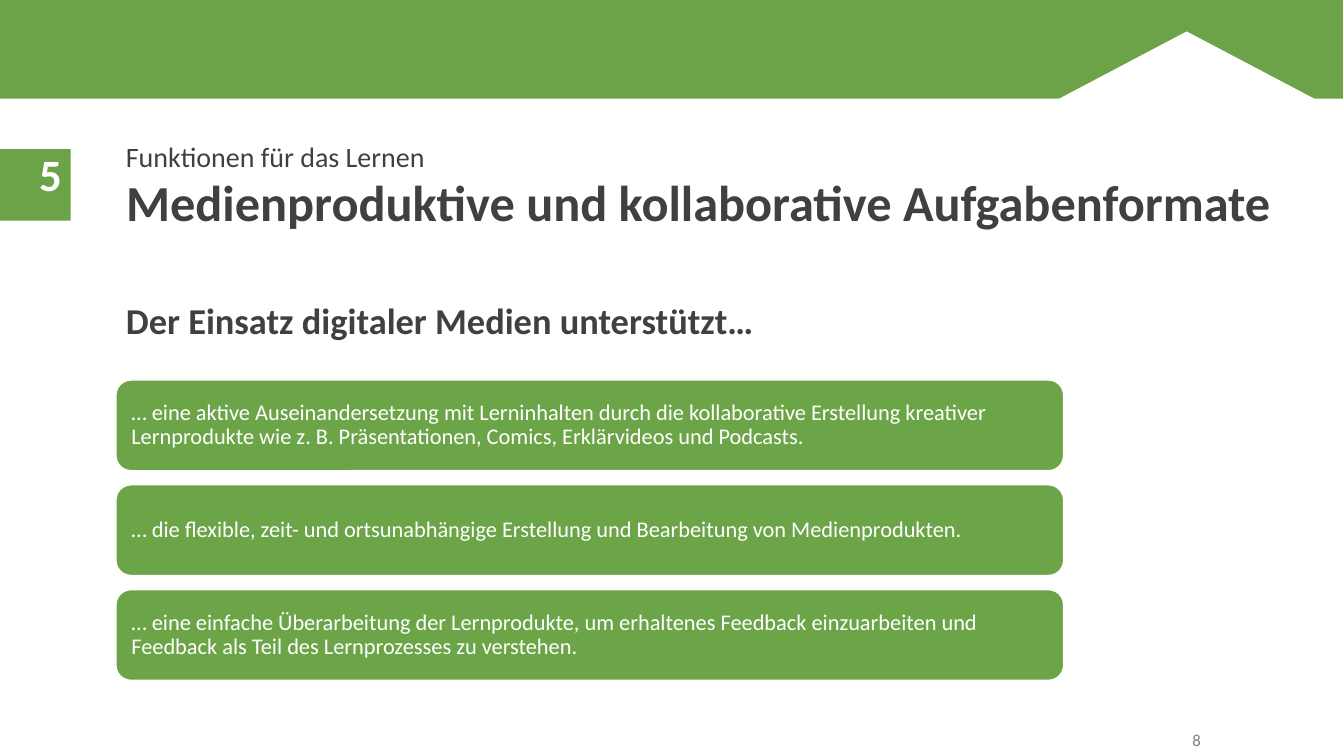
import dataclasses

import pptx
import pptx.dml.color
import pptx.enum.shapes
import pptx.enum.text
import pptx.util

SHAPE = pptx.enum.shapes.MSO_SHAPE
ANCHOR = pptx.enum.text.MSO_ANCHOR
ALIGN = pptx.enum.text.PP_ALIGN
PX = 9144


@dataclasses.dataclass(frozen=True)
class Theme:
    """Colours, font and type sizes of the slide."""
    font: str = "Calibri"
    green: str = "6CA348"
    card: str = "6CA448"
    white: str = "FFFFFF"
    ink: str = "404040"
    grey: str = "808080"
    title: int = 36
    badge: int = 32
    lead: int = 26
    kicker: int = 20
    body: int = 16
    small: int = 12


THEME = Theme()
CARDS = [
    "… eine aktive Auseinandersetzung mit Lerninhalten durch die kollaborative Erstellung kreativer "
    "Lernprodukte wie z. B. Präsentationen, Comics, Erklärvideos und Podcasts.",
    "… die flexible, zeit- und ortsunabhängige Erstellung und Bearbeitung von Medienprodukten.",
    "… eine einfache Überarbeitung der Lernprodukte, um erhaltenes Feedback einzuarbeiten und "
    "Feedback als Teil des Lernprozesses zu verstehen.",
]


def color(code):
    """Turn a hex code into a colour."""
    return pptx.dml.color.RGBColor.from_string(code)


def scale(box):
    """Turn a px box into EMU lengths."""
    return [n * PX for n in box]


def write(shape, text, size, ink, bold=False, align=ALIGN.LEFT,
          anchor=ANCHOR.TOP, space=1.0, pad=(10, 5)):
    """Fill a shape with one styled run."""
    frame = shape.text_frame
    frame.word_wrap = True
    frame.auto_size = pptx.enum.text.MSO_AUTO_SIZE.NONE
    frame.vertical_anchor = anchor
    frame.margin_left = frame.margin_right = pad[0] * PX
    frame.margin_top = frame.margin_bottom = pad[1] * PX
    para = frame.paragraphs[0]
    para.alignment = align
    para.line_spacing = space
    run = para.add_run()
    run.text = text
    font = run.font
    font.name = THEME.font
    font.size = pptx.util.Pt(size)
    font.bold = bold
    font.color.rgb = color(ink)


def label(slide, box, *args, **style):
    """Add a text box with one run."""
    write(slide.shapes.add_textbox(*scale(box)), *args, **style)


def block(slide, kind, box, fill, line=None):
    """Add a flat filled shape."""
    shape = slide.shapes.add_shape(kind, *scale(box))
    shape.shadow.inherit = False
    shape.fill.solid()
    shape.fill.fore_color.rgb = color(fill)
    if line:
        shape.line.color.rgb = color(line)
        shape.line.width = pptx.util.Pt(1)
    else:
        shape.line.fill.background()
    return shape


def banner(slide, box):
    """Draw the top band with its white roof."""
    left, top, wide, high = box
    block(slide, SHAPE.RECTANGLE, box, THEME.green)
    roof = (left + wide - 377, top + 32, 444, 117)
    block(slide, SHAPE.ISOSCELES_TRIANGLE, roof, THEME.white, THEME.white)


def badge(slide, box, text):
    """Draw the chapter number on its square."""
    left, top, wide, high = box
    block(slide, SHAPE.RECTANGLE, box, THEME.green)
    label(slide, (left + 30, top - 7, 36, 64), text, THEME.badge, THEME.white, bold=True)


def header(slide, box, kicker, title):
    """Place the kicker above the title."""
    left, top, wide, high = box
    label(slide, (left, top, 994, 55), kicker, THEME.kicker, THEME.ink,
          anchor=ANCHOR.BOTTOM, space=0.9)
    head = slide.shapes.title
    head.left, head.top, head.width, head.height = scale((left, top + high - 63, wide, 63))
    write(head, title, THEME.title, THEME.ink, bold=True, anchor=ANCHOR.BOTTOM, space=0.9)


def stack(slide, box, texts, gap=14):
    """Stack equal cards down the box."""
    left, top, wide, high = box
    tall = (high - gap * (len(texts) - 1)) // len(texts)
    for row, text in enumerate(texts):
        place = (left, top + row * (tall + gap), wide, tall)
        card = block(slide, SHAPE.ROUNDED_RECTANGLE, place, THEME.card, THEME.white)
        write(card, text, THEME.body, THEME.white, anchor=ANCHOR.MIDDLE,
              space=0.9, pad=(11, 11))


def main():
    """Build and save the slide."""
    deck = pptx.Presentation()
    deck.slide_width, deck.slide_height = scale((1333, 750))
    slide = deck.slides.add_slide(deck.slide_layouts[5])
    banner(slide, (-1, 0, 1333, 98))
    badge(slide, (-1, 148, 71, 71), "5")
    header(slide, (115, 122, 1174, 114), "Funktionen für das Lernen",
           "Medienproduktive und kollaborative Aufgabenformate")
    label(slide, (115, 296, 869, 60), "Der Einsatz digitaler Medien unterstützt…",
          THEME.lead, THEME.ink, bold=True, space=0.9)
    stack(slide, (115, 377, 940, 298), CARDS)
    label(slide, (901, 717, 300, 33), "8", THEME.small, THEME.grey,
          align=ALIGN.RIGHT, anchor=ANCHOR.MIDDLE)
    deck.save("out.pptx")


if __name__ == "__main__":
    main()
